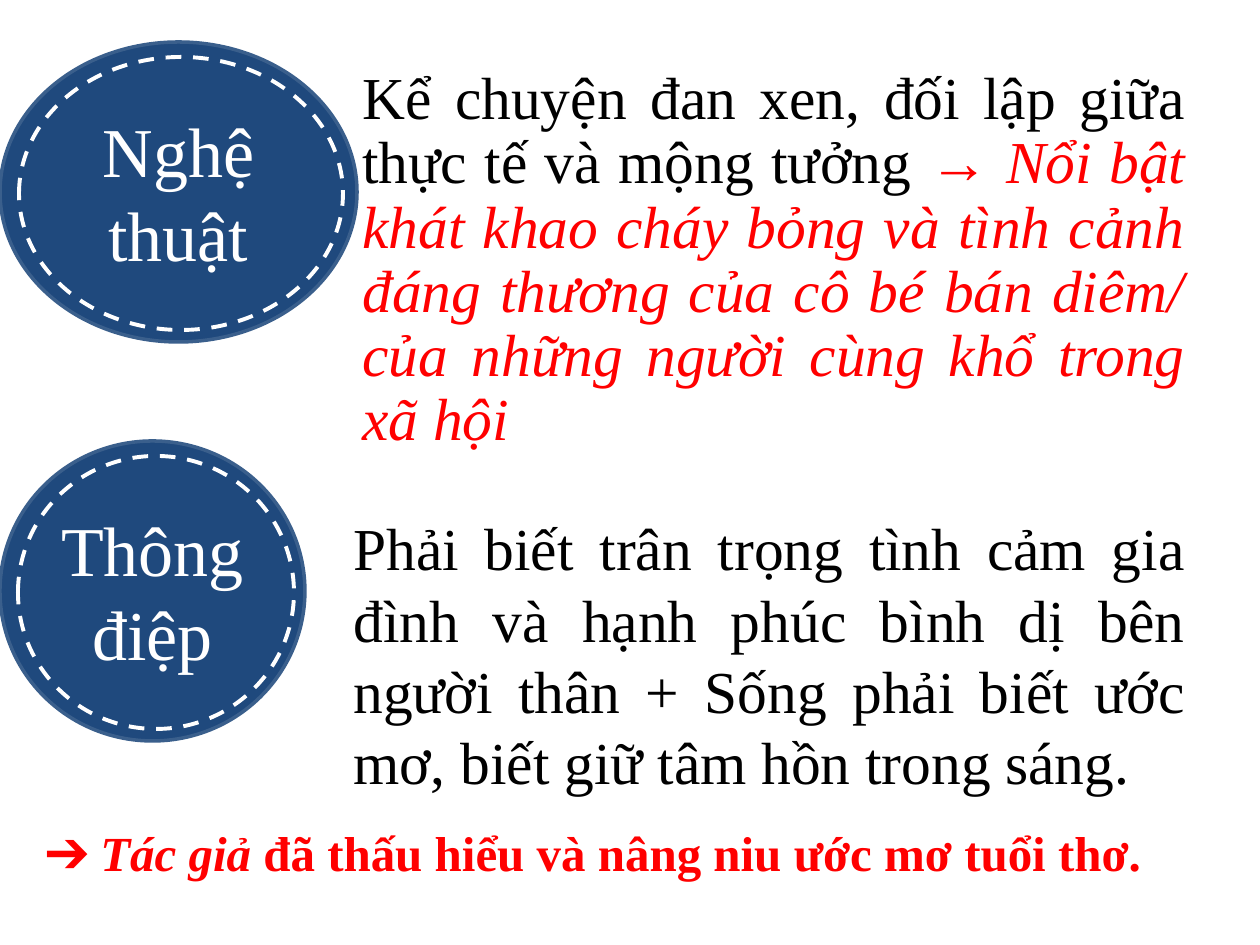
"""Build a slide on the art and the message of a story."""
from pptx import Presentation
from pptx.dml.color import RGBColor
from pptx.enum.dml import MSO_LINE
from pptx.enum.shapes import MSO_SHAPE
from pptx.enum.text import MSO_ANCHOR, PP_ALIGN as AL
from pptx.util import Pt

PX = 914400 // 126
C = {"navy": "1F497D", "edge": "3A5F8C", "white": "FFFFFF", "black": "000000", "red": "FF0000"}


def rgb(name):
    return RGBColor.from_string(C[name])


def write(sp, runs, size, para):
    tf = sp.text_frame
    tf.word_wrap = True
    p = tf.paragraphs[0]
    for key, value in para.items():
        setattr(p, key, value)
    for text, color, style in runs:
        r = p.add_run()
        r.text = text
        r.font.color.rgb = rgb(color)
        for key, value in {"name": "Times New Roman", "size": Pt(size), **style}.items():
            setattr(r.font, key, value)


prs = Presentation()
prs.slide_width, prs.slide_height = 1260 * PX, 945 * PX
s = prs.slides.add_slide(prs.slide_layouts[6])

badges = [
    ("Nghệ thuật", (0, 42, 357, 300), (19, 57, 324, 273)),
    ("Thông điệp", (0, 441, 305, 300), (18, 456, 276, 273)),
]
for label, disc, ring in badges:
    group = s.shapes.add_group_shape()
    for box, edge, width in ((disc, "edge", 2), (ring, "white", 2.25)):
        sp = group.shapes.add_shape(MSO_SHAPE.OVAL, *(n * PX for n in box))
        sp.shadow.inherit = False
        sp.line.color.rgb = rgb(edge)
        sp.line.width = Pt(width)
        if box is disc:
            sp.fill.solid()
            sp.fill.fore_color.rgb = rgb("navy")
            sp.text_frame.vertical_anchor = MSO_ANCHOR.MIDDLE
            write(sp, [(label, "white", {})], 40, {"alignment": AL.CENTER})
        else:
            sp.fill.background()
            sp.line.dash_style = MSO_LINE.DASH

texts = [
    ((350, 62, 848, 102), 34,
     {"alignment": AL.JUSTIFY, "line_spacing": 0.9, "space_before": Pt(10)},
     [("Kể chuyện đan xen, đối lập giữa thực tế và mộng tưởng ", "black", {}),
      ("→ Nổi bật khát khao cháy bỏng và tình cảnh đáng thương của cô bé bán diêm/ "
       "của những người cùng khổ trong xã hội", "red", {"italic": True})]),
    ((341, 505, 857, 159), 34, {"alignment": AL.JUSTIFY},
     [("Phải biết trân trọng tình cảm gia đình và hạnh phúc bình dị bên người thân "
       "+ Sống phải biết ước mơ, biết giữ tâm hồn trong sáng.", "black", {})]),
    ((32, 816, 1183, 83), 28, {},
     [("➔ ", "red", {"italic": True}),
      ("Tác giả ", "red", {"bold": True, "italic": True}),
      ("đã thấu hiểu và nâng niu ước mơ tuổi thơ.", "red", {"bold": True})]),
]
for box, size, para, runs in texts:
    sp = s.shapes.add_textbox(*(n * PX for n in box))
    write(sp, runs, size, para)

prs.save("out.pptx")
